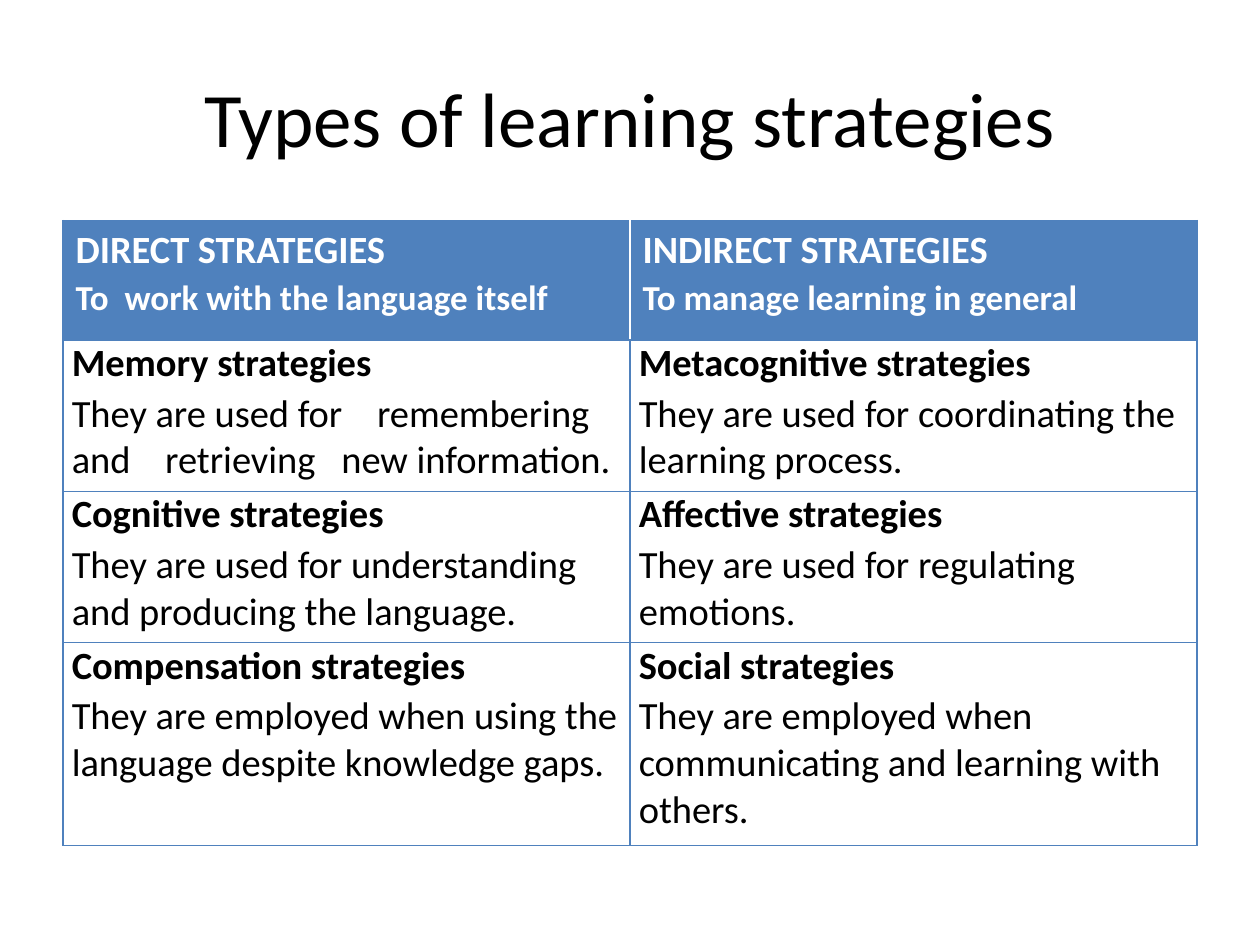
from lxml.etree import SubElement
from pptx import Presentation
from pptx.dml.color import RGBColor
from pptx.enum.text import MSO_ANCHOR, PP_ALIGN
from pptx.oxml.ns import qn
from pptx.util import Pt

PX = 9144  # 100 px to the inch
COLORS = {"blue": "4F81BD", "white": "FFFFFF", "black": "000000"}
STRATEGIES = [
    [("DIRECT STRATEGIES", "To  work with the language itself"),
     ("INDIRECT STRATEGIES", "To manage learning in general")],
    [("Memory strategies",
      "They are used for    remembering    and    retrieving   new information."),
     ("Metacognitive strategies",
      "They are used for coordinating the learning process.")],
    [("Cognitive strategies",
      "They are used for understanding and producing the language."),
     ("Affective strategies",
      "They are used for regulating emotions.")],
    [("Compensation strategies",
      "They are employed when using the language despite knowledge gaps."),
     ("Social strategies",
      "They are employed when communicating and learning with others.")],
]
ROW_HEIGHTS = [95, 120, 120, 161]
BODY_MARGINS = {"margin_left": 7 * PX, "margin_right": 7 * PX,
                "margin_top": 0, "margin_bottom": 0}


def write(paragraph, text, size, color, bold=False):
    run = paragraph.add_run()
    run.text = text
    for key, value in {"name": "Calibri", "size": Pt(size), "bold": bold}.items():
        setattr(run.font, key, value)
    run.font.color.rgb = RGBColor.from_string(COLORS[color])


def add_border(cell, side, color):
    """Draw a 1 pt line on one side (L, R, T or B) of a table cell."""
    line = SubElement(cell._tc.get_or_add_tcPr(), qn(f"a:ln{side}"), w=str(Pt(1)))
    SubElement(SubElement(line, qn("a:solidFill")), qn("a:srgbClr"), val=COLORS[color])


prs = Presentation()
prs.slide_width, prs.slide_height = 1000 * PX, 750 * PX
slide = prs.slides.add_slide(prs.slide_layouts[6])

title = slide.shapes.add_textbox(50 * PX, 30 * PX, 900 * PX, 125 * PX).text_frame
title.word_wrap = True
title.vertical_anchor = MSO_ANCHOR.MIDDLE
title.paragraphs[0].alignment = PP_ALIGN.CENTER
write(title.paragraphs[0], "Types of learning strategies", 44, "black")

table = slide.shapes.add_table(
    len(STRATEGIES), 2, 50 * PX, 175 * PX, 900 * PX, sum(ROW_HEIGHTS) * PX).table
table.horz_banding = False
for row, height in zip(table.rows, ROW_HEIGHTS):
    row.height = height * PX

for r, row in enumerate(STRATEGIES):
    is_header = r == 0
    text_color = "white" if is_header else "black"
    for c, (heading, description) in enumerate(row):
        cell = table.cell(r, c)
        inner_side = "R" if c == 0 else "L"
        for side in "LRTB":
            is_divider = is_header and side == inner_side
            add_border(cell, side, "white" if is_divider else "blue")
        cell.fill.solid()
        cell.fill.fore_color.rgb = RGBColor.from_string(
            COLORS["blue" if is_header else "white"])
        if not is_header:
            for key, value in BODY_MARGINS.items():
                setattr(cell, key, value)

        heading_line = cell.text_frame.paragraphs[0]
        description_line = cell.text_frame.add_paragraph()
        heading_line.space_before = description_line.space_before = Pt(2)
        write(heading_line, heading, 22, text_color, bold=True)
        write(description_line, description, 20 if is_header else 22,
              text_color, bold=is_header)

description_line.space_after = Pt(6)  # last cell only

prs.save("out.pptx")
